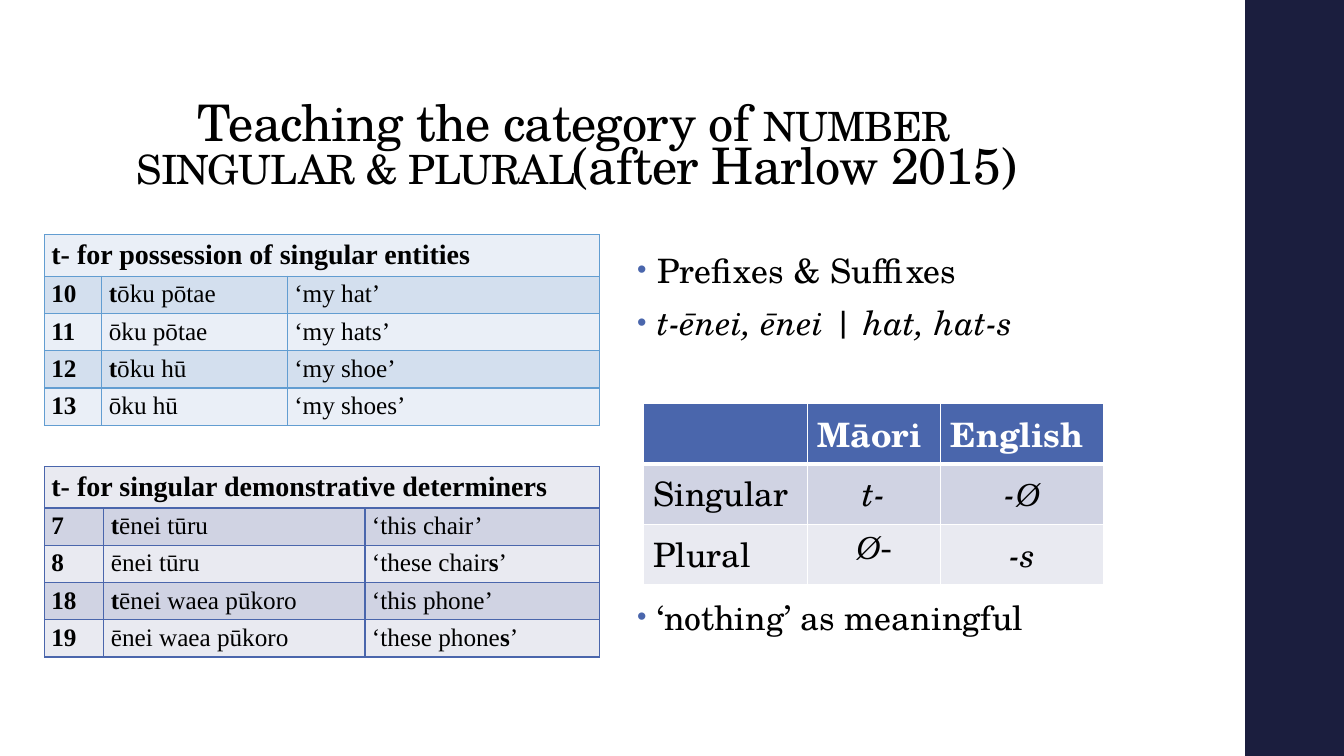
from lxml import etree
from pptx import Presentation
from pptx.dml.color import RGBColor
from pptx.enum.shapes import MSO_SHAPE
from pptx.enum.text import MSO_ANCHOR, PP_ALIGN
from pptx.oxml.ns import qn
from pptx.util import Inches, Pt

RECT = MSO_SHAPE.RECTANGLE
BOTTOM = MSO_ANCHOR.BOTTOM
CENTER = PP_ALIGN.CENTER
LEFT = PP_ALIGN.LEFT
SERIF = "TeX Gyre Schola"
TIMES = "Times New Roman"
HUES = {
    "black": "000000", "white": "FFFFFF", "navy": "1B1E3E",
    "blue": "4A66AC", "sky": "629DD1",
    "ice": "EAEFF7", "mist": "D3DFEE",
    "pale": "E9EAF1", "lilac": "D0D3E3",
}


def rgb(hue):
    return RGBColor.from_string(HUES[hue])


def add_run(para, text, size, font=SERIF, hue="black", style="", gap=0):
    run = para.add_run()
    run.text = text
    run.font.size = Pt(size)
    run.font.name = font
    run.font.color.rgb = rgb(hue)
    run.font.bold = "b" in style
    run.font.italic = "i" in style
    props = run.font._element
    if gap:
        props.set("spc", str(gap))
    if "s" in style:
        props.set("cap", "small")


def add_box(slide, box):
    frame = slide.shapes.add_textbox(*map(Inches, box)).text_frame
    frame.word_wrap = True
    return frame


def add_edge(cell, side, hue, width):
    props = cell._tc.get_or_add_tcPr()
    line = etree.SubElement(props, qn("a:ln" + side), w=str(Pt(width)))
    fill = etree.SubElement(line, qn("a:solidFill"))
    etree.SubElement(fill, qn("a:srgbClr"), val=HUES[hue])


def add_grid(slide, box, cols, rows):
    x, y = box
    size = (x, y, sum(cols), sum(rows))
    grid = slide.shapes.add_table(len(rows), len(cols), *map(Inches, size)).table
    for col, width in zip(grid.columns, cols):
        col.width = Inches(width)
    for row, height in zip(grid.rows, rows):
        row.height = Inches(height)
    return grid


def paint(cell, fill, edge, top=1, base=1):
    for side, width in (("L", 1), ("R", 1), ("T", top), ("B", base)):
        add_edge(cell, side, edge, width)
    cell.fill.solid()
    cell.fill.fore_color.rgb = rgb(fill)


def add_side(slide, box):
    bar = slide.shapes.add_shape(RECT, *map(Inches, box))
    bar.shadow.inherit = False
    bar.fill.solid()
    bar.fill.fore_color.rgb = rgb("navy")
    bar.line.fill.background()


def add_title(slide, box):
    frame = add_box(slide, box)
    frame.vertical_anchor = BOTTOM
    frame.margin_bottom = 0
    para = frame.paragraphs[0]
    para.alignment = CENTER
    para.line_spacing = 0.72
    add_run(para, "Teaching the category of ", 36, gap=-50)
    add_run(para, "number ", 36, style="s", gap=-50)
    para.add_line_break()
    add_run(para, "singular & plural ", 36, style="s", gap=-50)
    add_run(para, "(after Harlow 2015)", 36, gap=-50)


def add_words(slide, box, cols, head, rows, tones, edge):
    grid = add_grid(slide, box, cols, [0.41] + [0.37] * len(rows))
    table = [[[(head, "b")], [], []]] + rows
    for r, row in enumerate(table):
        for c, runs in enumerate(row):
            cell = grid.cell(r, c)
            paint(cell, tones[r % 2], edge)
            cell.margin_left = cell.margin_right = Inches(0.07)
            cell.margin_top = cell.margin_bottom = 0
            para = cell.text_frame.paragraphs[0]
            para.line_spacing = 1.15
            for text, style in runs:
                add_run(para, text, 18 if r else 20, TIMES, style=style)
    grid.cell(0, 0).merge(grid.cell(0, 2))


def add_points(slide, box):
    frame = add_box(slide, box)
    points = [
        (0, [("Prefixes & Suffixes", "")]),
        (11.5, [("t-ēnei, ēnei ", "i"), ("| ", ""), ("hat, hat-s", "i")]),
        (184, [("‘nothing’ as meaningful", "")]),
    ]
    for n, (space, runs) in enumerate(points):
        para = frame.add_paragraph() if n else frame.paragraphs[0]
        para.line_spacing = 0.84
        para.space_before = Pt(space)
        para.space_after = Pt(2)
        props = para._p.get_or_add_pPr()
        props.set("marL", str(Inches(0.2)))
        props.set("indent", str(Inches(-0.2)))
        tint = etree.SubElement(props, qn("a:buClr"))
        etree.SubElement(tint, qn("a:srgbClr"), val=HUES["blue"])
        etree.SubElement(props, qn("a:buSzPct"), val="80000")
        etree.SubElement(props, qn("a:buFont"), typeface="Arial")
        etree.SubElement(props, qn("a:buChar"), char="•")
        for text, style in runs:
            add_run(para, text, 24, style=style, gap=10)


def add_forms(slide, box):
    rows = [
        [[], [("Māori", SERIF)], [("English", SERIF)]],
        [[("Singular", SERIF)], [("t-", SERIF)], [("-", SERIF), ("Ø", TIMES)]],
        [[("Plural", SERIF)], [("Ø-", TIMES)], [("-s", SERIF)]],
    ]
    tones = ["blue", "lilac", "pale"]
    grid = add_grid(slide, box, [1.63, 1.32, 1.62], [0.6] * 3)
    for r, row in enumerate(rows):
        for c, runs in enumerate(row):
            cell = grid.cell(r, c)
            paint(cell, tones[r], "white", 3 if r == 1 else 1, 1 if r else 3)
            para = cell.text_frame.paragraphs[0]
            para.alignment = CENTER if r and c else LEFT
            style = "b" if r == 0 else "i" if c else ""
            for text, font in runs:
                add_run(para, text, 24, font, "black" if r else "white", style)


def main():
    deck = Presentation()
    deck.slide_width = Inches(13.33)
    deck.slide_height = Inches(7.5)
    slide = deck.slides.add_slide(deck.slide_layouts[6])
    add_side(slide, (12.35, 0, 0.98, 7.5))
    add_title(slide, (0.29, 0.39, 10.86, 1.53))
    owned = [
        [[("10", "b")], [("t", "b"), ("ōku pōtae", "")], [("‘my hat’", "")]],
        [[("11", "b")], [("ōku pōtae", "")], [("‘my hats’", "")]],
        [[("12", "b")], [("t", "b"), ("ōku hū", "")], [("‘my shoe’", "")]],
        [[("13", "b")], [("ōku hū", "")], [("‘my shoes’", "")]],
    ]
    add_words(slide, (0.44, 2.33), [0.57, 1.84, 3.1],
              "t- for possession of singular entities",
              owned, ["ice", "mist"], "sky")
    shown = [
        [[("7", "b")], [("t", "b"), ("ēnei tūru", "")], [("‘this chair’", "")]],
        [[("8", "b")], [("ēnei tūru", "")],
         [("‘these chair", ""), ("s", "b"), ("’", "")]],
        [[("18", "b")], [("t", "b"), ("ēnei waea pūkoro", "")],
         [("‘this phone’", "")]],
        [[("19", "b")], [("ēnei waea pūkoro", "")],
         [("‘these phone", ""), ("s", "b"), ("’", "")]],
    ]
    add_words(slide, (0.44, 4.63), [0.59, 2.59, 2.33],
              "t- for singular demonstrative determiners",
              shown, ["pale", "lilac"], "blue")
    add_points(slide, (6.22, 2.49, 5.51, 4.73))
    add_forms(slide, (6.38, 4))
    deck.save("out.pptx")


if __name__ == "__main__":
    main()
